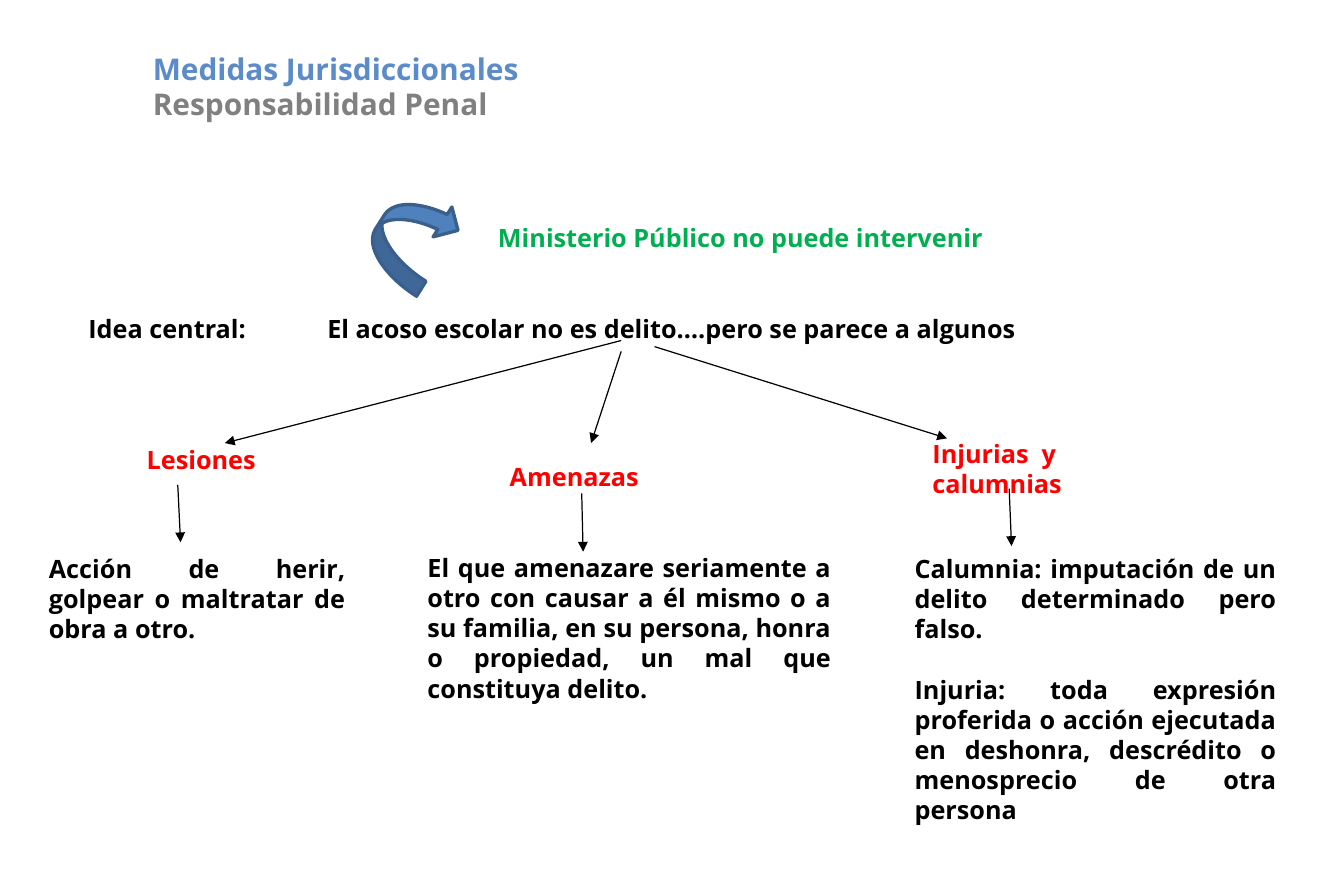
"""Build the slide on criminal liability for school bullying."""
import pptx
import pptx.dml.color
import pptx.enum.shapes
import pptx.enum.text
import pptx.oxml
import pptx.oxml.ns
import pptx.util

Cm, Pt = pptx.util.Cm, pptx.util.Pt
RGB = pptx.dml.color.RGBColor.from_string
COLORS = {
    "title": "5B8BC8", "subtitle": "808080", "text": "000000", "crime": "FF0000",
    "ministry": "00B050", "arrow": "4F81BD", "arrow_edge": "3A5F8C",
}
BODY_SIZE, TITLE_SIZE = 15.2, 18
LINE_FACTOR = 1.2

presentation = pptx.Presentation()
presentation.slide_width, presentation.slide_height = Cm(28.58), Cm(19.05)
slide = presentation.slides.add_slide(presentation.slide_layouts[6])


def add_text(box, text, colors, size=BODY_SIZE, justified=False):
    frame = slide.shapes.add_textbox(*map(Cm, box)).text_frame
    frame.word_wrap = True
    frame.text = text
    for paragraph, color in zip(frame.paragraphs, colors):
        paragraph.line_spacing = Pt(size * LINE_FACTOR)
        if justified:
            paragraph.alignment = pptx.enum.text.PP_ALIGN.JUSTIFY
        for run in paragraph.runs:
            run.font.name = "Open Sans"
            run.font.size = Pt(size)
            run.font.bold = True
            run.font.color.rgb = RGB(COLORS[color])
    return frame


def add_arrow(start, end):
    arrow = slide.shapes.add_connector(
        pptx.enum.shapes.MSO_CONNECTOR.STRAIGHT, *map(Cm, start + end))
    arrow.line.color.rgb = RGB(COLORS["text"])
    arrow.line.width = Pt(0.75)
    head = pptx.oxml.parse_xml(
        f'<a:tailEnd {pptx.oxml.ns.nsdecls("a")} type="triangle"/>')
    arrow.line._get_or_add_ln().append(head)
    arrow._element.spPr.append(
        pptx.oxml.parse_xml(f'<a:effectLst {pptx.oxml.ns.nsdecls("a")}/>'))


central_idea = add_text(
    (1.63, 6.53, 21.82, 0.91),
    "Idea central:\tEl acoso escolar no es delito….pero se parece a algunos", ["text"])
central_idea.paragraphs[0]._p.get_or_add_pPr().append(pptx.oxml.parse_xml(
    f'<a:tabLst {pptx.oxml.ns.nsdecls("a")}><a:tab pos="{Cm(5.08)}" algn="l"/></a:tabLst>'))

add_text((10.34, 4.6, 11.35, 0.91), "Ministerio Público no puede intervenir", ["ministry"])

ministry_arrow = slide.shapes.add_shape(
    pptx.enum.shapes.MSO_SHAPE.CURVED_DOWN_ARROW, Cm(7.75), Cm(4.29), Cm(2.03), Cm(1.5))
ministry_arrow.rotation = 302.2
ministry_arrow.shadow.inherit = False
ministry_arrow.fill.solid()
ministry_arrow.fill.fore_color.rgb = RGB(COLORS["arrow"])
ministry_arrow.line.color.rgb = RGB(COLORS["arrow_edge"])
ministry_arrow.line.width = Pt(2)

crimes = [
    ("Lesiones", (2.87, 9.32, 3.12, 0.91)),
    ("Amenazas", (10.59, 9.68, 3.99, 0.91)),
    ("Injurias  y calumnias", (19.58, 9.19, 3.86, 1.55)),
]
for crime, box in crimes:
    add_text(box, crime, ["crime"])

arrows = [
    ((13.21, 7.24), (4.78, 9.42)),
    ((13.21, 7.47), (12.57, 9.42)),
    ((13.92, 7.37), (20.14, 9.32)),
    ((3.78, 10.31), (3.84, 11.53)),
    ((12.37, 10.49), (12.4, 11.73)),
    ((21.46, 10.39), (21.51, 11.61)),
]
for start, end in arrows:
    add_arrow(start, end)

definitions = [
    ("Acción de herir, golpear o maltratar de obra a otro.", (0.79, 11.63, 6.81, 2.21)),
    ("El que amenazare seriamente a otro con causar a él mismo o a su familia, "
     "en su persona, honra o propiedad, un mal que constituya delito.",
     (8.84, 11.61, 9.09, 3.51)),
    ("Calumnia: imputación de un delito determinado pero falso.\n"
     "Injuria: toda expresión proferida o acción ejecutada en deshonra, "
     "descrédito o menosprecio de otra persona", (19.2, 11.63, 8.2, 6.1)),
]
for definition, box in definitions:
    frame = add_text(box, definition, ["text", "text"], justified=True)
    for paragraph in frame.paragraphs[1:]:
        paragraph.space_before = Pt(BODY_SIZE * LINE_FACTOR)

heading = add_text(
    (3.07, 1.07, 14.61, 1.55), "Medidas Jurisdiccionales\nResponsabilidad Penal",
    ["title", "subtitle"], TITLE_SIZE)
heading.margin_left = Cm(0.18)
heading.margin_top = heading.margin_right = heading.margin_bottom = 0

presentation.save("out.pptx")
